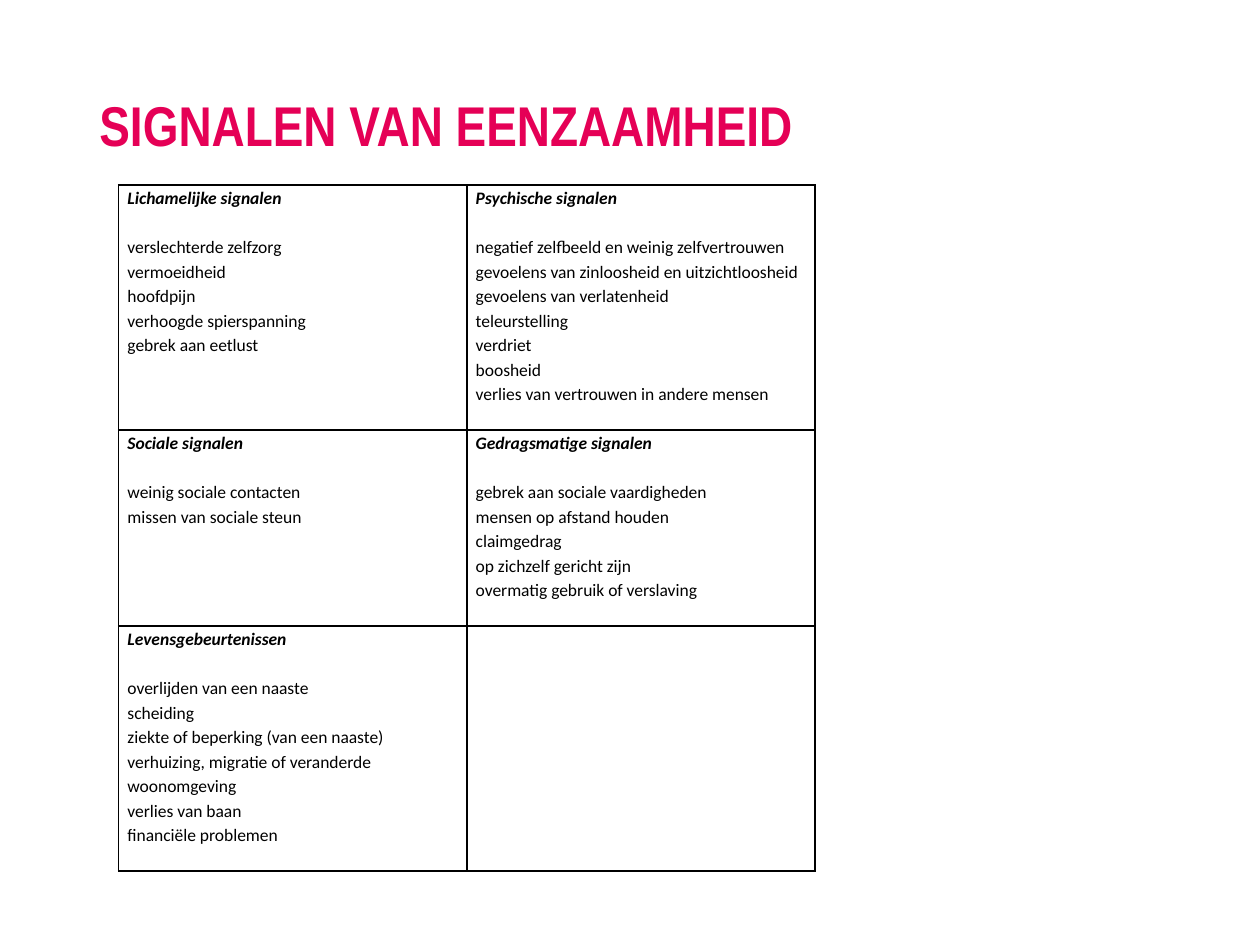
from lxml.etree import SubElement
from pptx import Presentation
from pptx.dml.color import RGBColor
from pptx.enum.text import MSO_ANCHOR, MSO_AUTO_SIZE, PP_ALIGN
from pptx.oxml.ns import qn
from pptx.util import Cm, Pt

TITLE = "SIGNALEN VAN EENZAAMHEID"
SIGNALS = [
    [
        ("Lichamelijke signalen", [
            "verslechterde zelfzorg", "vermoeidheid", "hoofdpijn",
            "verhoogde spierspanning", "gebrek aan eetlust"]),
        ("Psychische signalen", [
            "negatief zelfbeeld en weinig zelfvertrouwen",
            "gevoelens van zinloosheid en uitzichtloosheid",
            "gevoelens van verlatenheid", "teleurstelling", "verdriet",
            "boosheid", "verlies van vertrouwen in andere mensen"]),
    ],
    [
        ("Sociale signalen", [
            "weinig sociale contacten", "missen van sociale steun"]),
        ("Gedragsmatige signalen", [
            "gebrek aan sociale vaardigheden", "mensen op afstand houden",
            "claimgedrag", "op zichzelf gericht zijn",
            "overmatig gebruik of verslaving"]),
    ],
    [
        ("Levensgebeurtenissen", [
            "overlijden van een naaste", "scheiding",
            "ziekte of beperking (van een naaste)",
            "verhuizing, migratie of veranderde woonomgeving",
            "verlies van baan", "financiële problemen"]),
    ],
]
ROW_HEIGHTS = [Cm(4.94), Cm(3.95), Cm(4.94)]
COLUMN_WIDTH = Cm(7.02)
LINE_PITCH = Pt(14)
COLORS = {"title": "E50056", "text": "000000", "border": "000000"}


def add_run(paragraph, wording, font_name, size, color, bold=False, italic=False):
    run = paragraph.add_run()
    run.text = wording
    font = run.font
    font.name, font.size, font.bold, font.italic = font_name, size, bold, italic
    font.color.rgb = RGBColor.from_string(COLORS[color])


def format_cell(cell):
    cell.margin_left = cell.margin_right = Cm(0.18)
    cell.margin_top = cell.margin_bottom = 0
    cell.vertical_anchor = MSO_ANCHOR.TOP
    cell.fill.background()
    properties = cell._tc.get_or_add_tcPr()
    for position, side in enumerate(("lnL", "lnR", "lnT", "lnB")):
        border = SubElement(properties, qn(f"a:{side}"), w=str(Pt(1)))
        SubElement(SubElement(border, qn("a:solidFill")), qn("a:srgbClr"),
                   val=COLORS["border"])
        properties.insert(position, border)


def write_signals(cell, heading, signals):
    frame = cell.text_frame
    for index, wording in enumerate([heading, *signals]):
        is_heading = index == 0
        paragraph = frame.paragraphs[0] if is_heading else frame.add_paragraph()
        paragraph.line_spacing = LINE_PITCH
        paragraph.space_after = LINE_PITCH if is_heading else Pt(0)
        add_run(paragraph, wording, "Calibri", Pt(10), "text", is_heading, is_heading)


def main():
    """Build the slide with the table of signs of loneliness."""
    presentation = Presentation()
    presentation.slide_width, presentation.slide_height = Cm(25.4), Cm(19.05)
    slide = presentation.slides.add_slide(presentation.slide_layouts[5])

    title = slide.shapes.title
    title.left, title.top, title.width, title.height = Cm(1.75), Cm(1.02), Cm(21.9), Cm(2.31)
    title.text_frame.auto_size = MSO_AUTO_SIZE.NONE
    title.text_frame.vertical_anchor = MSO_ANCHOR.BOTTOM
    title_line = title.text_frame.paragraphs[0]
    title_line.alignment = PP_ALIGN.LEFT
    title_line.line_spacing = 0.9
    add_run(title_line, TITLE, "Arial Narrow", Pt(32), "title", bold=True)

    signal_table = slide.shapes.add_table(
        len(SIGNALS), 2, Cm(2.39), Cm(3.73), 2 * COLUMN_WIDTH, sum(ROW_HEIGHTS)).table
    signal_table.first_row = signal_table.horz_banding = False
    for column in signal_table.columns:
        column.width = COLUMN_WIDTH
    for row, height in zip(signal_table.rows, ROW_HEIGHTS):
        row.height = height
    for cell in signal_table.iter_cells():
        format_cell(cell)
    for row, groups in zip(signal_table.rows, SIGNALS):
        for cell, (heading, signals) in zip(row.cells, groups):
            write_signals(cell, heading, signals)

    presentation.save("out.pptx")


if __name__ == "__main__":
    main()
